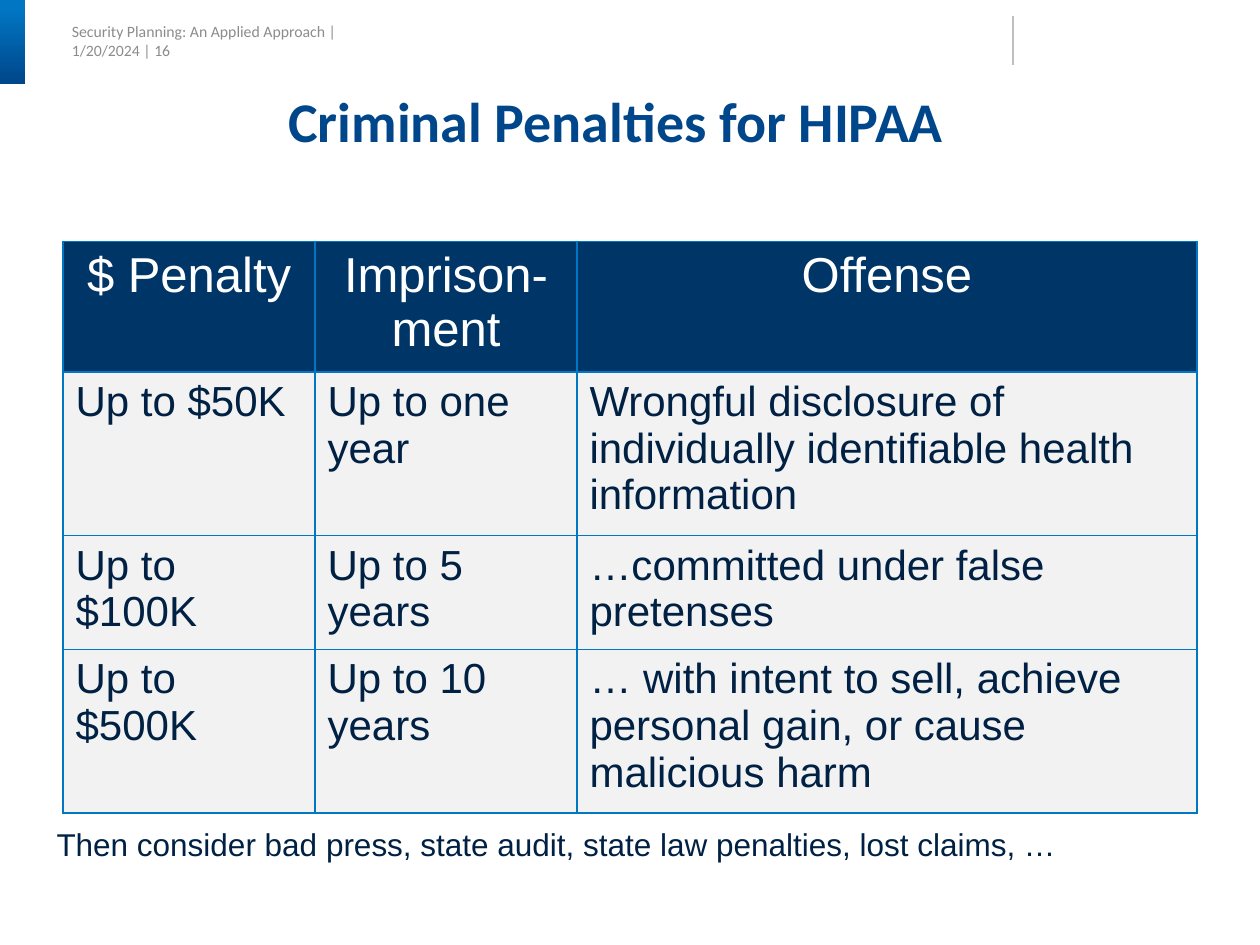
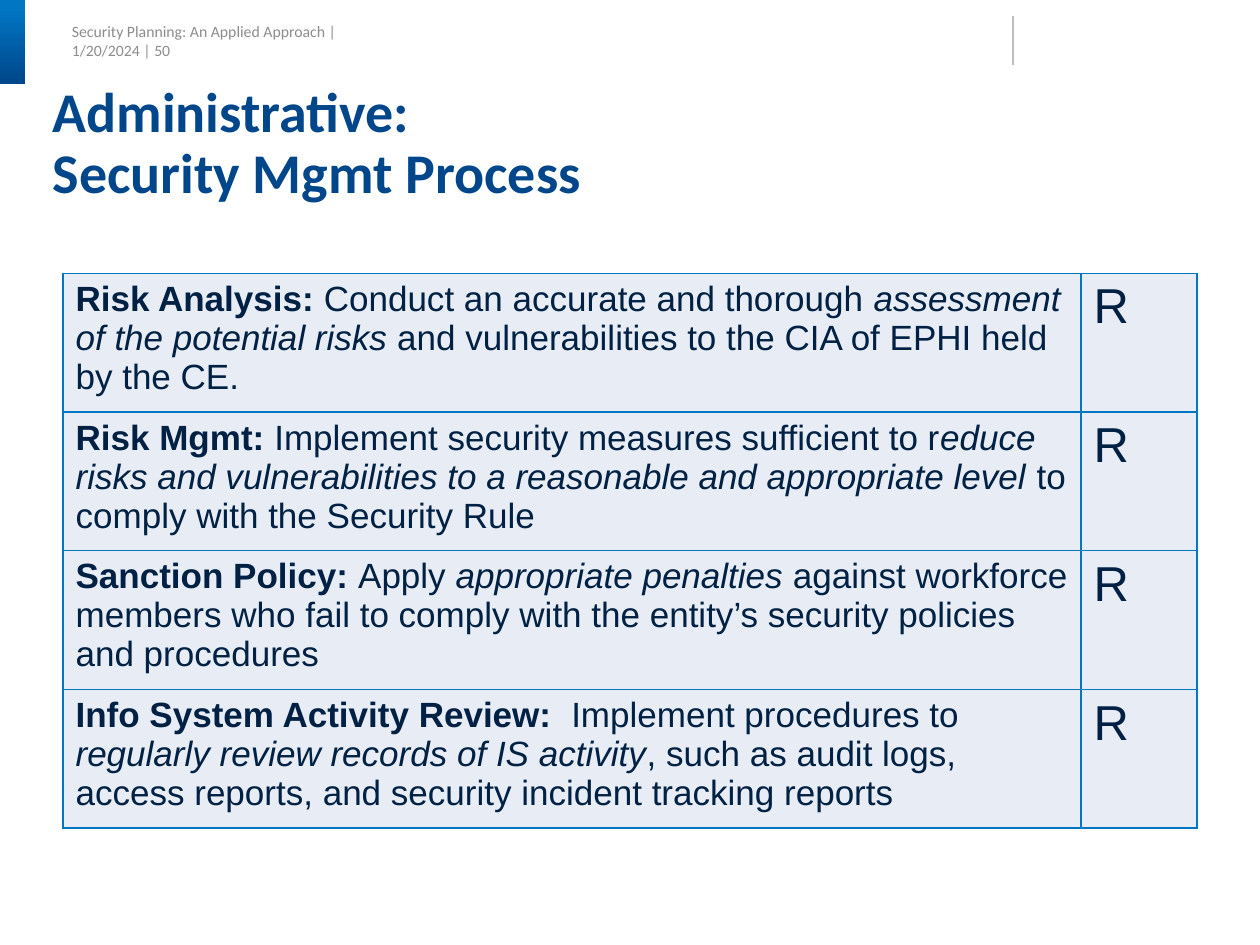
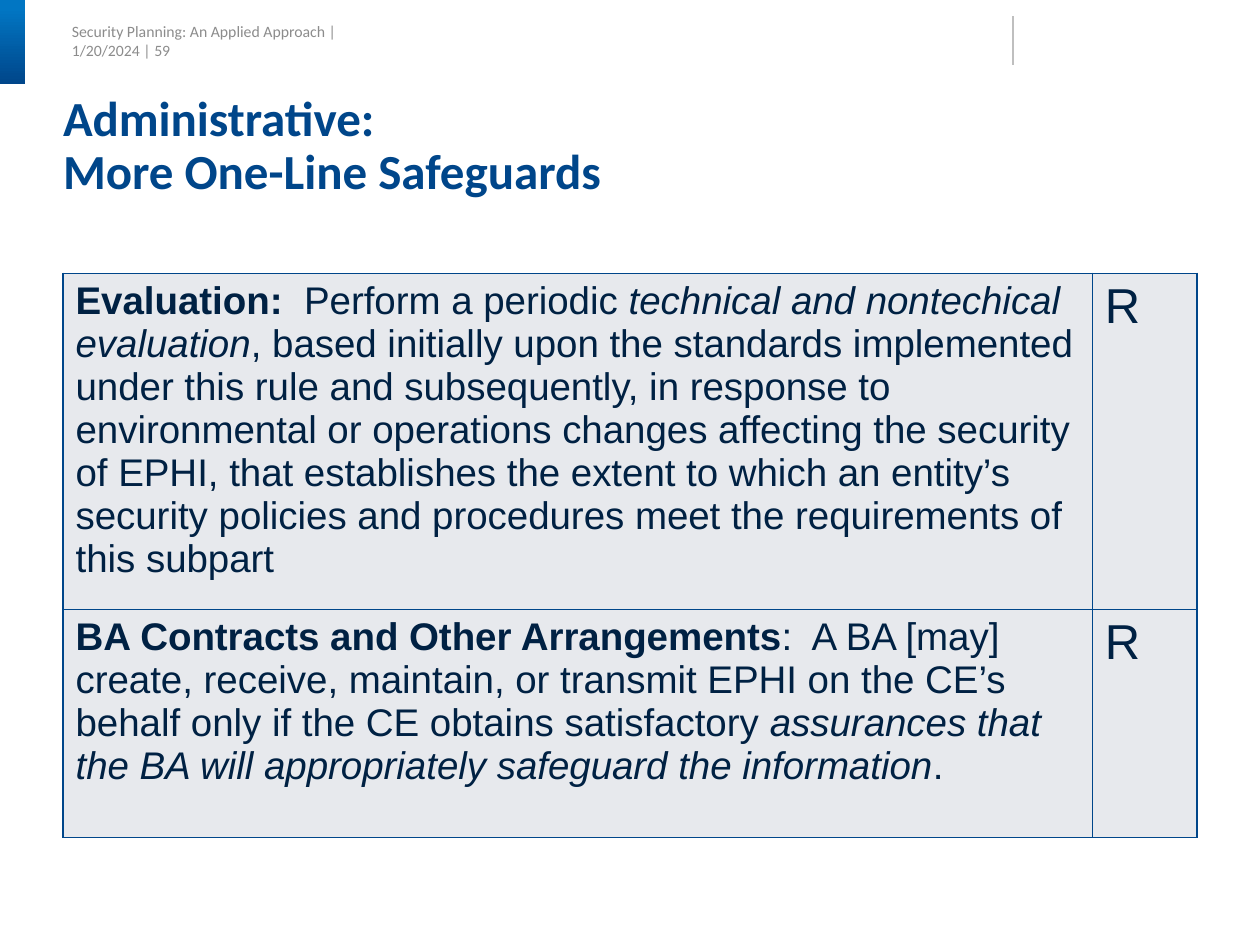
from lxml.etree import SubElement
from pptx import Presentation
from pptx.dml.color import RGBColor
from pptx.enum.shapes import MSO_CONNECTOR as Connector, MSO_SHAPE as Shape
from pptx.enum.text import MSO_ANCHOR as Anchor, MSO_AUTO_SIZE as AutoSize, PP_ALIGN as Align
from pptx.oxml.ns import qn
from pptx.util import Cm, Pt

AZURE = "0176C3"
BLUE = "00468A"
NAVY = "003568"
INK = "002143"
WHITE = "FFFFFF"
GREY = "8C8C8C"
RULE = "BFBFBF"
TITLE_FONT = "Calibri"
BODY_FONT = "Arial"
TITLE_ONLY = 5
TABLE_LEFT = 1.27


def rgb(hex_string):
    return RGBColor.from_string(hex_string)


class Deck:
    def __init__(self):
        self.prs = Presentation()
        self.prs.slide_width, self.prs.slide_height = Cm(25.4), Cm(19.05)
        self.slide = None

    def new_slide(self, number):
        self.slide = self.prs.slides.add_slide(self.prs.slide_layouts[TITLE_ONLY])
        self.band()
        self.header_rule()
        header = self.text(f"Security Planning: An Applied Approach | 1/20/2024 | {number}",
                           (1.45, 0.58, 7.21, 0.58), 9, TITLE_FONT, GREY)
        header.vertical_anchor = Anchor.MIDDLE
        header.margin_left = header.margin_top = 0
        header.margin_right, header.margin_bottom = Cm(0.51), Cm(0.1)

    def band(self):
        band = self.slide.shapes.add_shape(Shape.RECTANGLE, 0, 0, Cm(0.51), Cm(1.7))
        band.shadow.inherit = False
        band.line.fill.background()
        band.fill.gradient()
        band.fill.gradient_angle = 270
        for stop, position, color in zip(band.fill.gradient_stops, (0.1, 1), (AZURE, BLUE)):
            stop.position = position
            stop.color.rgb = rgb(color)

    def header_rule(self):
        rule = self.slide.shapes.add_connector(
            Connector.STRAIGHT, Cm(20.42), Cm(0.33), Cm(20.42), Cm(1.32))
        rule.line.color.rgb = rgb(RULE)
        rule.line.width = Pt(0.75)
        SubElement(rule._element.spPr, qn("a:effectLst"))

    def run(self, paragraph, text, size, font, color, bold=False, italic=False):
        run = paragraph.add_run()
        run.text = text
        run.font.size, run.font.name = Pt(size), font
        run.font.bold, run.font.italic = bold, italic
        run.font.color.rgb = rgb(color)

    def text(self, words, box, size, font, color):
        frame = self.slide.shapes.add_textbox(*map(Cm, box)).text_frame
        frame.word_wrap = False
        self.run(frame.paragraphs[0], words, size, font, color)
        return frame

    def title(self, lines, box, size=32, align=Align.LEFT):
        title = self.slide.shapes.title
        title.left, title.top, title.width, title.height = map(Cm, box)
        frame = title.text_frame
        frame.auto_size, frame.vertical_anchor = AutoSize.NONE, Anchor.TOP
        frame.margin_left = frame.margin_right = frame.margin_top = frame.margin_bottom = 0
        paragraph = frame.paragraphs[0]
        paragraph.alignment, paragraph.line_spacing = align, 0.9
        for index, line in enumerate(lines):
            if index:
                paragraph.add_line_break()
            self.run(paragraph, line, size, TITLE_FONT, BLUE, bold=True)

    def table(self, top, widths, heights):
        table = self.slide.shapes.add_table(
            len(heights), len(widths), Cm(TABLE_LEFT), Cm(top),
            Cm(sum(widths)), Cm(sum(heights))).table
        table.first_row = table.horz_banding = False
        for column, width in zip(table.columns, widths):
            column.width = Cm(width)
        for row, height in zip(table.rows, heights):
            row.height = Cm(height)
        return table

    def cell(self, cell, runs, size, fill, border, color=INK, align=Align.LEFT):
        properties = cell._tc.get_or_add_tcPr()
        for side in ("a:lnL", "a:lnR", "a:lnT", "a:lnB"):
            line = SubElement(properties, qn(side), w=str(Pt(1)))
            SubElement(SubElement(line, qn("a:solidFill")), qn("a:srgbClr"), val=border)
        cell.fill.solid()
        cell.fill.fore_color.rgb = rgb(fill)
        paragraph = cell.text_frame.paragraphs[0]
        paragraph.alignment = align
        for words, style in runs:
            self.run(paragraph, words, size, BODY_FONT, color, style == "b", style == "i")

    def penalty_table(self, top, widths, heights, header, offenses):
        table = self.table(top, widths, heights)
        for column, heading in enumerate(header):
            self.cell(table.cell(0, column), [(heading, "")], 28, NAVY, AZURE, WHITE, Align.CENTER)
        for row, offense in enumerate(offenses, 1):
            for column, words in enumerate(offense):
                self.cell(table.cell(row, column), [(words, "")], 24, "F2F2F2", AZURE)

    def safeguard_table(self, widths, heights, safeguards, size, fill, border):
        table = self.table(5.51, widths, heights)
        for row, safeguard in enumerate(safeguards):
            self.cell(table.cell(row, 0), safeguard, size, fill, border)
            self.cell(table.cell(row, 1), [("R", "")], 28, fill, border)


PENALTY_HEADER = ("$ Penalty", "Imprison-ment", "Offense")
PENALTIES = (
    ("Up to $50K", "Up to one year",
     "Wrongful disclosure of individually identifiable health information"),
    ("Up to $100K", "Up to 5 years", "…committed under false pretenses"),
    ("Up to $500K", "Up to 10 years",
     "… with intent to sell, achieve personal gain, or cause malicious harm"),
)

MANAGEMENT_SAFEGUARDS = (
    (("Risk Analysis: ", "b"), ("Conduct an accurate and thorough ", ""),
     ("assessment of the potential risks", "i"),
     (" and vulnerabilities to the CIA of EPHI held by the CE.", "")),
    (("Risk Mgmt: ", "b"), ("Implement security measures sufficient to r", ""),
     ("educe risks and vulnerabilities to a reasonable and appropriate level ", "i"),
     ("to comply with the Security Rule", "")),
    (("Sanction Policy: ", "b"), ("Apply ", ""), ("appropriate penalties ", "i"),
     ("against workforce members who fail to comply with the entity’s security "
      "policies and procedures", "")),
    (("Info System Activity Review:  ", "b"), ("Implement procedures to ", ""),
     ("regularly review records of IS activity", "i"),
     (", such as audit logs, access reports, and security incident tracking reports", "")),
)

ONE_LINE_SAFEGUARDS = (
    (("Evaluation:  ", "b"), ("Perform a periodic ", ""),
     ("technical and nontechical evaluation", "i"),
     (", based initially upon the standards implemented under this rule and subsequently, "
      "in response to environmental or operations changes affecting the security of EPHI, "
      "that establishes the extent to which an entity’s security policies and procedures "
      "meet the requirements of this subpart", "")),
    (("BA Contracts and Other Arrangements", "b"),
     (":  A BA [may] create, receive, maintain, or transmit EPHI on the CE’s behalf "
      "only if the CE obtains satisfactory ", ""),
     ("assurances that the BA will appropriately safeguard the information", "i"), (".", "")),
)


def main():
    deck = Deck()

    deck.new_slide(16)
    deck.title(["Criminal Penalties for HIPAA"], (0.99, 1.9, 22.86, 1.22), align=Align.CENTER)
    deck.penalty_table(4.87, (5.08, 5.28, 12.5), (2.62, 3.3, 2.29, 3.3),
                       PENALTY_HEADER, PENALTIES)
    deck.text("Then consider bad press, state audit, state law penalties, lost claims, …",
              (0.89, 16.51, 21.54, 1.02), 18, BODY_FONT, INK)

    deck.new_slide(50)
    deck.title(["Administrative:", "Security Mgmt Process"], (1.06, 1.7, 22.86, 2.46))
    deck.safeguard_table((20.52, 2.34), [2.79] * 4, MANAGEMENT_SAFEGUARDS, 20, "E7ECF5", AZURE)

    deck.new_slide(59)
    deck.title(["Administrative:", "More One-Line Safeguards"], (1.27, 1.9, 22.86, 2.16), 28)
    deck.safeguard_table((20.75, 2.11), (6.2, 4.6), ONE_LINE_SAFEGUARDS, 22, "E7E9ED", BLUE)

    deck.prs.save("out.pptx")


if __name__ == "__main__":
    main()
